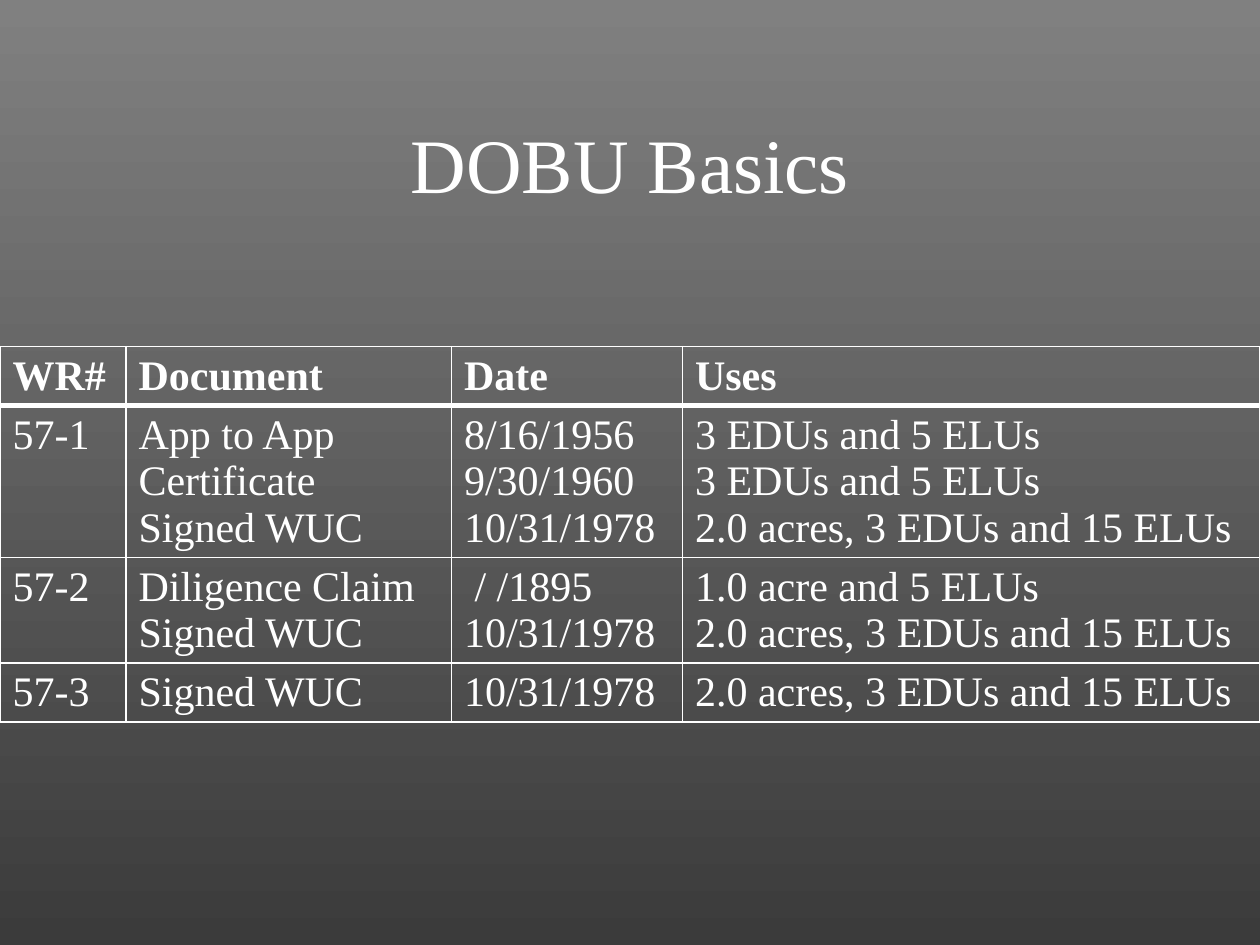
from dataclasses import dataclass
from typing import Any

from lxml import etree
from pptx import Presentation
from pptx.dml.color import RGBColor
from pptx.enum.text import MSO_ANCHOR, PP_ALIGN
from pptx.oxml.ns import qn
from pptx.util import Pt

CENTER = PP_ALIGN.CENTER
MIDDLE = MSO_ANCHOR.MIDDLE
FACE = "Times New Roman"
WHITE = "FFFFFF"
SHADES = ("808080", "3B3B3B")
WIDTHS = (72, 186, 132, 330)
ROW_H = 29.5
TOP = 198


@dataclass(frozen=True)
class Row:
    cells: tuple[str, ...]
    bold: bool = False
    above: float = 1
    below: float = 1


USES = "2.0 acres, 3 EDUs and 15 ELUs"
ROWS = (
    Row(("WR#", "Document", "Date", "Uses"), bold=True, below=3),
    Row(
        (
            "57-1",
            "App to App\nCertificate\nSigned WUC",
            "8/16/1956\n9/30/1960\n10/31/1978",
            f"3 EDUs and 5 ELUs\n3 EDUs and 5 ELUs\n{USES}",
        ),
        above=3,
    ),
    Row(
        (
            "57-2",
            "Diligence Claim\nSigned WUC",
            " / /1895\n10/31/1978",
            f"1.0 acre and 5 ELUs\n{USES}",
        )
    ),
    Row(("57-3", "Signed WUC", "10/31/1978", USES)),
)


def color(code: str) -> RGBColor:
    return RGBColor.from_string(code)


def style(frame: Any, size: float, bold: bool) -> None:
    values = {"name": FACE, "size": Pt(size), "bold": bold}
    for para in frame.paragraphs:
        for run in para.runs:
            for key, value in values.items():
                setattr(run.font, key, value)
            run.font.color.rgb = color(WHITE)


def border(cell: Any, row: Row) -> None:
    props = cell._tc.get_or_add_tcPr()
    sides = {"lnL": 1, "lnR": 1, "lnT": row.above, "lnB": row.below}
    for index, (side, width) in enumerate(sides.items()):
        line = etree.Element(qn(f"a:{side}"), w=str(Pt(width)))
        fill = etree.SubElement(line, qn("a:solidFill"))
        etree.SubElement(fill, qn("a:srgbClr"), val=WHITE)
        props.insert(index, line)


def draw_back(slide: Any) -> None:
    fill = slide.background.fill
    fill.gradient()
    fill.gradient_angle = 270
    for stop, shade in zip(fill.gradient_stops, SHADES):
        stop.color.rgb = color(shade)


def draw_title(slide: Any, text: str) -> None:
    title = slide.shapes.title
    place = {"left": 54, "top": 48, "width": 612, "height": 90}
    for key, value in place.items():
        setattr(title, key, Pt(value))
    frame = title.text_frame
    frame.text = text
    frame.vertical_anchor = MIDDLE
    frame.paragraphs[0].alignment = CENTER
    style(frame, 44, False)


def draw_table(slide: Any, rows: tuple[Row, ...]) -> None:
    table = slide.shapes.add_table(
        len(rows), len(WIDTHS), Pt(0), Pt(TOP),
        Pt(sum(WIDTHS)), Pt(ROW_H * len(rows)),
    ).table
    table.first_row = False
    table.horz_banding = False
    for column, width in zip(table.columns, WIDTHS):
        column.width = Pt(width)
    for line, row in zip(table.rows, rows):
        line.height = Pt(ROW_H)
        for cell, text in zip(line.cells, row.cells):
            cell.text = text
            cell.fill.background()
            style(cell.text_frame, 24, row.bold)
            border(cell, row)


def main() -> None:
    deck = Presentation()
    deck.slide_width = Pt(720)
    deck.slide_height = Pt(540)
    slide = deck.slides.add_slide(deck.slide_layouts[5])
    draw_back(slide)
    draw_title(slide, "DOBU Basics")
    draw_table(slide, ROWS)
    deck.save("out.pptx")


if __name__ == "__main__":
    main()
